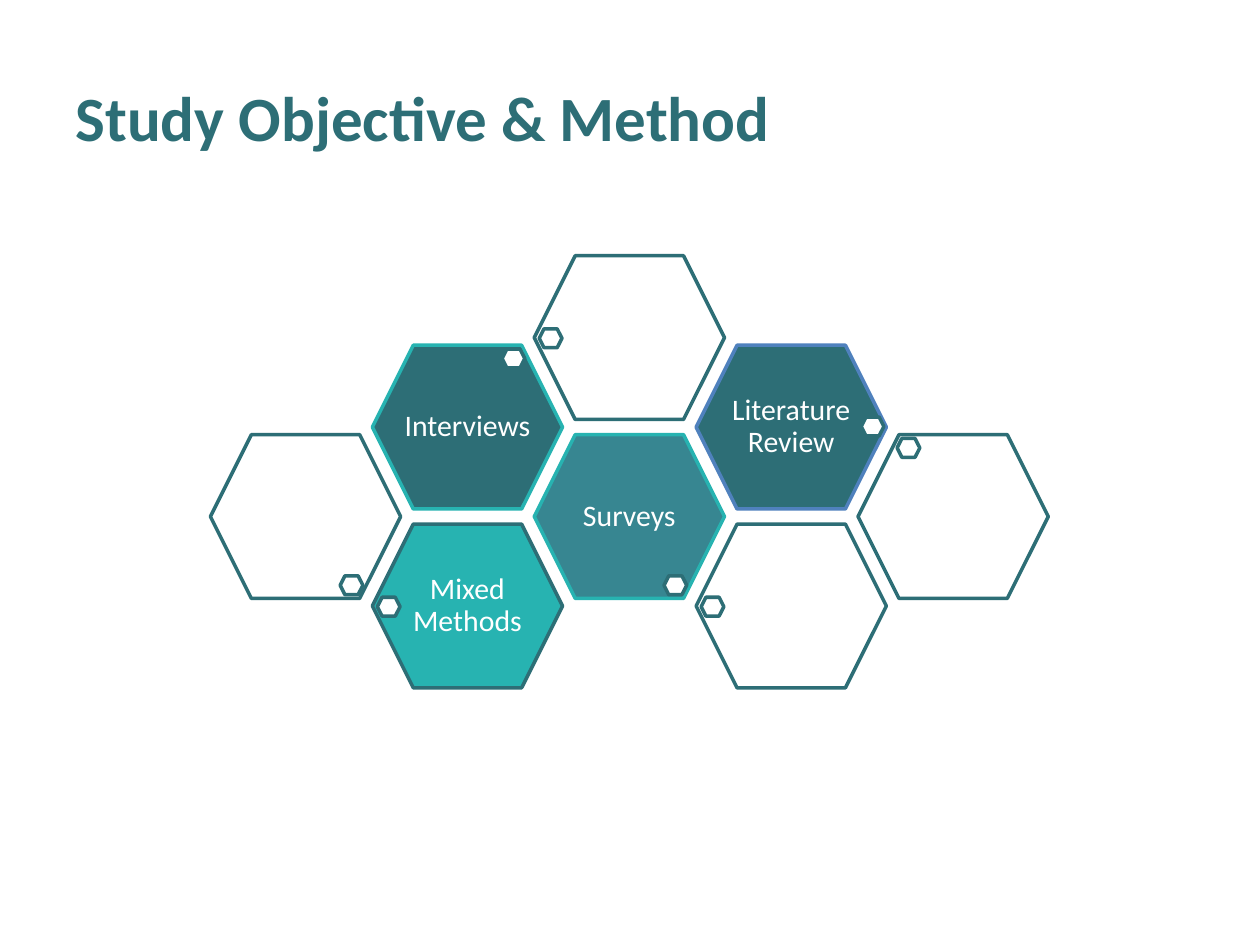
from lxml import etree
from pptx import Presentation
from pptx import util as u
from pptx.dml import color
from pptx.enum import shapes, text
from pptx.oxml import ns

COLORS = {
    "deep": "2D6E76",
    "mid": "378691",
    "bright": "27B3B1",
    "blue": "4F81BD",
    "white": "FFFFFF",
}
CELL = (1.51, 1.3)
DOT = (0.18, 0.15)
ORIGIN = (1.67, 2.03)
STEP = (1.285, 0.71)
CORNERS = {
    "left": (0.04, 0.58),
    "right": (1.31, 0.57),
    "upper left": (0.31, 0.03),
    "upper right": (1.03, 0.03),
    "lower right": (1.03, 1.12),
}
CELLS = [
    (1, 3, "Mixed Methods", "bright", "deep", "left"),
    (0, 2, "", "white", "deep", "lower right"),
    (2, 2, "Surveys", "mid", "bright", "lower right"),
    (3, 3, "", "white", "deep", "left"),
    (1, 1, "Interviews", "deep", "bright", "upper right"),
    (2, 0, "", "white", "deep", "left"),
    (3, 1, "Literature Review", "deep", "blue", "right"),
    (4, 2, "", "white", "deep", "upper left"),
]


class Honeycomb:
    font = "Calibri"

    def __init__(self, slide):
        self.slide = slide

    def rgb(self, name):
        return color.RGBColor.from_string(COLORS[name])

    def style(self, paragraph, size, ink, bold=False):
        paragraph.font.name = self.font
        paragraph.font.size = u.Pt(size)
        paragraph.font.bold = bold
        paragraph.font.color.rgb = self.rgb(ink)

    def title(self, wording):
        heading = self.slide.shapes.title
        heading.left, heading.top = u.Inches(0.5), u.Inches(0.3)
        heading.width, heading.height = u.Inches(9), u.Inches(1.25)
        frame = heading.text_frame
        frame.text = wording
        frame.vertical_anchor = text.MSO_ANCHOR.MIDDLE
        frame.paragraphs[0].alignment = text.PP_ALIGN.LEFT
        self.style(frame.paragraphs[0], 36, "deep", True)

    def hexagon(self, left, top, size, fill, line):
        outline = self.slide.shapes.add_shape(
            shapes.MSO_SHAPE.HEXAGON, u.Inches(left), u.Inches(top),
            *map(u.Inches, size))
        outline.adjustments[0] = 0.25
        outline.shadow.inherit = False
        outline.fill.solid()
        outline.fill.fore_color.rgb = self.rgb(fill)
        outline.line.color.rgb = self.rgb(line)
        outline.line.width = u.Pt(2)
        return outline

    def soften(self, hexagon):
        tint = hexagon.fill._xPr.find(ns.qn("a:solidFill"))[0]
        etree.SubElement(tint, ns.qn("a:alpha"), val="90000")

    def label(self, hexagon, wording):
        frame = hexagon.text_frame
        frame.text = wording
        frame.word_wrap = True
        frame.vertical_anchor = text.MSO_ANCHOR.MIDDLE
        frame.margin_left = frame.margin_right = 0
        frame.margin_top = frame.margin_bottom = u.Inches(0.02)
        paragraph = frame.paragraphs[0]
        paragraph.alignment = text.PP_ALIGN.CENTER
        paragraph.line_spacing = 0.9
        self.style(paragraph, 17, "white")

    def cell(self, column, row, wording, fill, line, corner):
        left = ORIGIN[0] + column * STEP[0]
        top = ORIGIN[1] + row * STEP[1]
        hexagon = self.hexagon(left, top, CELL, fill, line)
        if wording:
            self.label(hexagon, wording)
        else:
            self.soften(hexagon)
        dx, dy = CORNERS[corner]
        self.hexagon(left + dx, top + dy, DOT, "white", "deep")


def main():
    deck = Presentation()
    deck.slide_width, deck.slide_height = u.Inches(10), u.Inches(7.5)
    honeycomb = Honeycomb(deck.slides.add_slide(deck.slide_layouts[5]))
    honeycomb.title("Study Objective & Method")
    for cell in CELLS:
        honeycomb.cell(*cell)
    deck.save("out.pptx")


if __name__ == "__main__":
    main()
